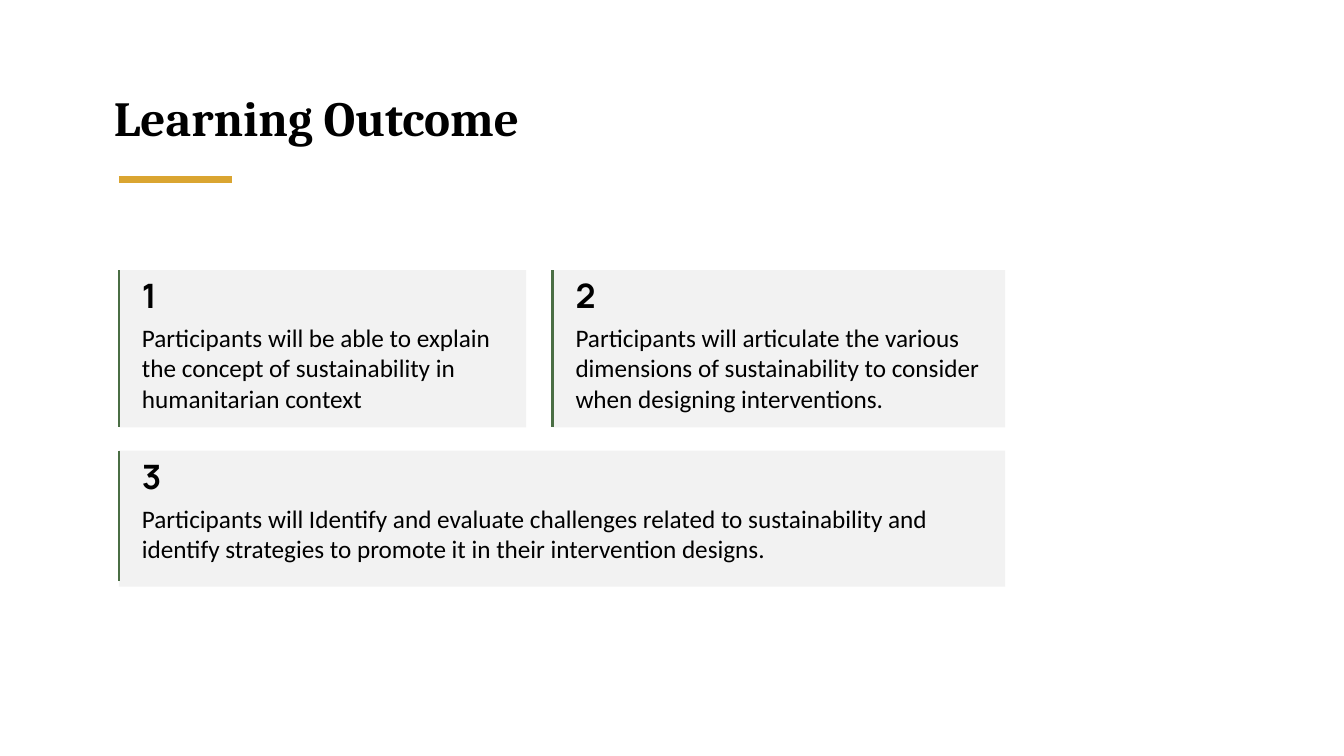
from lxml import etree
from pptx import Presentation
from pptx.dml.color import RGBColor
from pptx.enum.shapes import MSO_CONNECTOR, MSO_SHAPE
from pptx.enum.text import MSO_ANCHOR, MSO_AUTO_SIZE, PP_ALIGN
from pptx.oxml.ns import qn
from pptx.util import Inches, Pt

LINE, RECT = MSO_CONNECTOR.STRAIGHT, MSO_SHAPE.RECTANGLE
TOP, LEFT, FIXED = MSO_ANCHOR.TOP, PP_ALIGN.LEFT, MSO_AUTO_SIZE.NONE

# Grid of the cards, in inches
X1, X2, END = 1.18, 5.48, 9.97
ROW1, ROW2 = 2.68, 4.47
PAD, HEAD = 0.13, 0.47

# left, top, width, height, rule height, text width, text height, text
CARDS = [
    (X1, ROW1, 4.04, 1.56, 1.56, 4.04, 1.01,
     "Participants will be able to explain the concept of sustainability "
     "in humanitarian context"),
    (X2, ROW1, END - X2, 1.56, 1.56, 4.23, 1.01,
     "Participants will articulate the various dimensions of sustainability "
     "to consider when designing interventions."),
    (X1, ROW2, END - X1, 1.35, 1.29, 8.53, 0.71,
     "Participants will Identify and evaluate challenges related to "
     "sustainability and identify strategies to promote it in their "
     "intervention designs."),
]

prs = Presentation()
prs.slide_width, prs.slide_height = Inches(13.33), Inches(7.5)
slide = prs.slides.add_slide(prs.slide_layouts[5])
shapes = slide.shapes


def write(box, text, size, face, bold):
    frame = box.text_frame
    frame.word_wrap = True
    frame.auto_size = FIXED
    frame.vertical_anchor = TOP
    para = frame.paragraphs[0]
    para.alignment = LEFT
    run = para.add_run()
    run.text = text
    font = run.font
    font.size, font.name, font.bold = Pt(size), face, bold
    font.color.rgb = RGBColor.from_string("000000")


def rule(x1, y1, x2, y2, color, width):
    line = shapes.add_connector(
        LINE, Inches(x1), Inches(y1), Inches(x2), Inches(y2))
    line.line.color.rgb = RGBColor.from_string(color)
    line.line.width = Pt(width)
    etree.SubElement(line._element.spPr, qn("a:effectLst"))


# Title and its accent
title = shapes.title
title.left, title.top = Inches(1.03), Inches(0.82)
title.width, title.height = Inches(6.67), Inches(0.69)
write(title, "Learning Outcome", 35, "Cambria", True)
rule(X1, 1.78, 2.3, 1.78, "DAA531", 4.5)

# Numbered cards
for num, (x, y, w, h, bar, wide, high, text) in enumerate(CARDS, 1):
    card = shapes.add_shape(RECT, Inches(x), Inches(y), Inches(w), Inches(h))
    card.shadow.inherit = False
    card.fill.solid()
    card.fill.fore_color.rgb = RGBColor.from_string("F2F2F2")
    card.line.fill.background()
    rule(x, y, x, y + bar, "4A6E44", 1.5)

    label = shapes.add_textbox(
        Inches(x + PAD), Inches(y), Inches(0.42), Inches(0.5))
    write(label, str(num), 24, "Manrope", True)
    body = shapes.add_textbox(
        Inches(x + PAD), Inches(y + HEAD), Inches(wide), Inches(high))
    write(body, text, 18, "Calibri", False)

prs.save("out.pptx")
